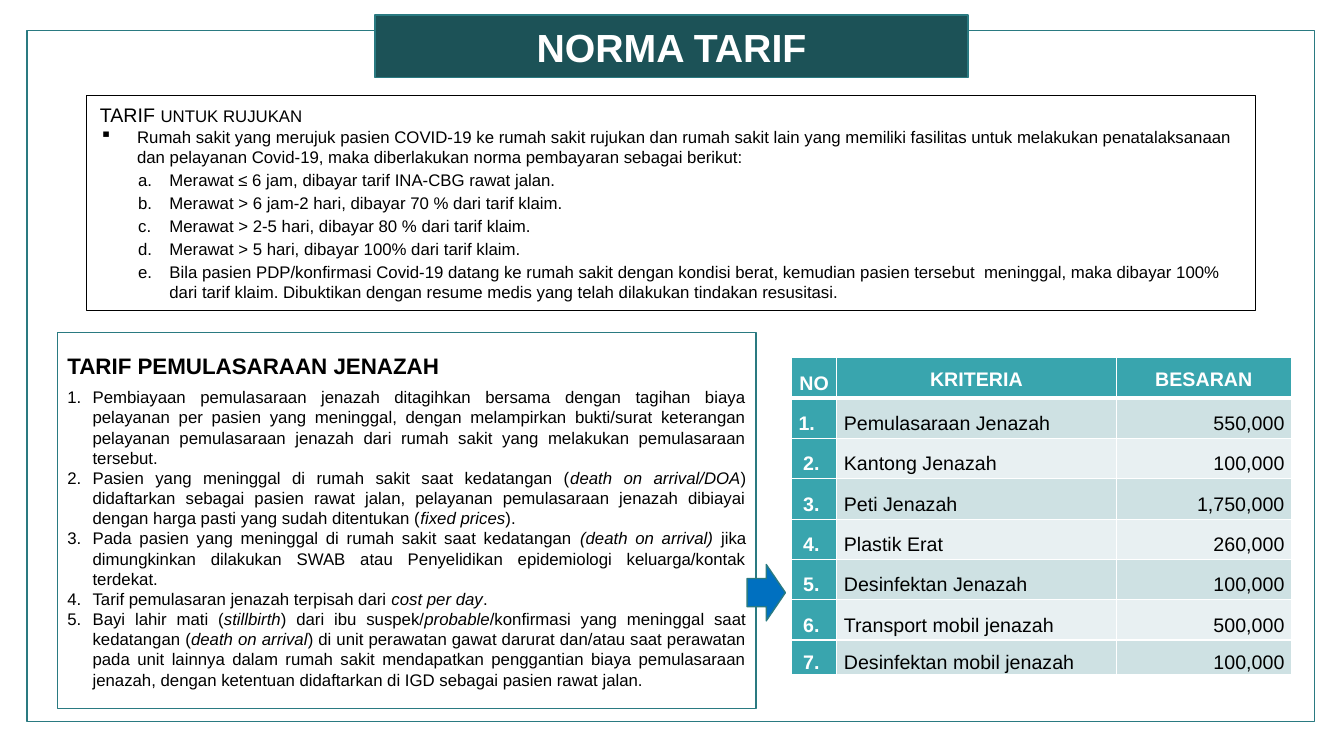
from lxml.etree import SubElement
from pptx import Presentation
from pptx.dml.color import RGBColor
from pptx.enum.shapes import MSO_SHAPE
from pptx.enum.text import MSO_ANCHOR, MSO_AUTO_SIZE, PP_ALIGN
from pptx.oxml.ns import qn
from pptx.util import Inches, Pt

WHITE = RGBColor(0xFF, 0xFF, 0xFF)
BLACK = RGBColor(0, 0, 0)
DARK = RGBColor(0x1C, 0x52, 0x57)
EDGE = RGBColor(0x2A, 0x7A, 0x81)
TEAL = RGBColor(0x39, 0xA5, 0xAE)
BLUE = RGBColor(0x00, 0x70, 0xC0)
BANDS = (RGBColor(0xCE, 0xE1, 0xE3), RGBColor(0xE8, 0xF0, 0xF2))

INTRO = ("Rumah sakit yang merujuk pasien COVID-19 ke rumah sakit rujukan dan rumah sakit lain "
         "yang memiliki fasilitas untuk melakukan penatalaksanaan dan pelayanan Covid-19, "
         "maka diberlakukan norma pembayaran sebagai berikut:")
NORMS = (
    "Merawat ≤ 6 jam, dibayar tarif INA-CBG rawat jalan.",
    "Merawat > 6 jam-2 hari, dibayar 70 % dari tarif klaim.",
    "Merawat > 2-5 hari, dibayar 80 % dari tarif klaim.",
    "Merawat > 5 hari, dibayar 100% dari tarif klaim.",
    "Bila pasien PDP/konfirmasi Covid-19 datang ke rumah sakit dengan kondisi berat, "
    "kemudian pasien tersebut  meninggal, maka dibayar 100% dari tarif klaim. "
    "Dibuktikan dengan resume medis yang telah dilakukan tindakan resusitasi.",
)
# Asterisks enclose italic words
RULES = (
    "Pembiayaan pemulasaraan jenazah ditagihkan bersama dengan tagihan biaya pelayanan per "
    "pasien yang meninggal, dengan melampirkan bukti/surat keterangan pelayanan pemulasaraan "
    "jenazah dari rumah sakit yang melakukan pemulasaraan tersebut.",
    "Pasien yang meninggal di rumah sakit saat kedatangan (*death on arrival/DOA*) didaftarkan "
    "sebagai pasien rawat jalan, pelayanan pemulasaraan jenazah dibiayai dengan harga pasti "
    "yang sudah ditentukan (*fixed prices*).",
    "Pada pasien yang meninggal di rumah sakit saat kedatangan *(death on arrival) *jika "
    "dimungkinkan dilakukan SWAB atau Penyelidikan epidemiologi keluarga/kontak terdekat.",
    "Tarif pemulasaran jenazah terpisah dari *cost per day*.",
    "Bayi lahir mati (*stillbirth*) dari ibu suspek/*probable*/konfirmasi yang meninggal saat "
    "kedatangan (*death on arrival*) di unit perawatan gawat darurat dan/atau saat perawatan "
    "pada unit lainnya dalam rumah sakit mendapatkan penggantian biaya pemulasaraan jenazah, "
    "dengan ketentuan didaftarkan di IGD sebagai pasien rawat jalan.",
)
HEADS = ("NO", "KRITERIA", "BESARAN")
COSTS = (
    ("Pemulasaraan Jenazah", "550,000"),
    ("Kantong Jenazah", "100,000"),
    ("Peti Jenazah", "1,750,000"),
    ("Plastik Erat", "260,000"),
    ("Desinfektan Jenazah", "100,000"),
    ("Transport mobil jenazah", "500,000"),
    ("Desinfektan mobil jenazah", "100,000"),
)


def paint(shape, fill, line, width=1):
    if fill is None:
        shape.fill.background()
    else:
        shape.fill.solid()
        shape.fill.fore_color.rgb = fill
    shape.line.color.rgb = line
    shape.line.width = Pt(width)


def add_box(slide, kind, area, fill, line, width=1):
    shape = slide.shapes.add_shape(kind, *map(Inches, area))
    shape.shadow.inherit = False
    paint(shape, fill, line, width)
    return shape


def style(run, size, color=BLACK, bold=False):
    font = run.font
    font.name, font.size, font.bold = "Arial", Pt(size), bold
    font.color.rgb = color


def add_text(para, text, size, bold=False):
    for i, part in enumerate(text.split("*")):
        run = para.add_run()
        run.text = part
        style(run, size, bold=bold)
        run.font.italic = i % 2 == 1


def set_list(para, left, hang, tag, **attrs):
    props = para._p.get_or_add_pPr()
    props.set("marL", str(Inches(left)))
    props.set("indent", str(-Inches(hang)))
    SubElement(props, qn("a:" + tag), **attrs)


def add_title(slide, text):
    title = slide.shapes.title
    title.left, title.top, title.width, title.height = map(Inches, (3.72, 0.15, 5.88, 0.62))
    paint(title, DARK, EDGE)
    frame = title.text_frame
    frame.text = text
    frame.auto_size = MSO_AUTO_SIZE.NONE
    frame.vertical_anchor = MSO_ANCHOR.MIDDLE
    frame.paragraphs[0].alignment = PP_ALIGN.CENTER
    style(frame.paragraphs[0].runs[0], 28, WHITE, True)
    return title


def add_norms(slide):
    box = add_box(slide, MSO_SHAPE.RECTANGLE, (0.86, 0.95, 11.59, 2.13), None, BLACK, 0.75)
    frame = box.text_frame
    frame.word_wrap = True
    frame.vertical_anchor = MSO_ANCHOR.TOP
    frame.margin_left = frame.margin_right = Inches(0.13)
    frame.margin_top = frame.margin_bottom = Inches(0.07)
    head = frame.paragraphs[0]
    add_text(head, "TARIF ", 14)
    add_text(head, "UNTUK RUJUKAN", 12)
    intro = frame.add_paragraph()
    add_text(intro, INTRO, 12)
    set_list(intro, 0.37, 0.37, "buChar", char="▪")
    for norm in NORMS:
        para = frame.add_paragraph()
        para.space_before = Pt(2)
        add_text(para, norm, 12)
        set_list(para, 0.69, 0.31, "buAutoNum", type="alphaLcPeriod")
    for para in frame.paragraphs:
        para.alignment = PP_ALIGN.LEFT


def add_rules(slide):
    box = add_box(slide, MSO_SHAPE.RECTANGLE, (0.57, 3.3, 6.93, 3.73), WHITE, EDGE)
    frame = box.text_frame
    frame.word_wrap = True
    frame.vertical_anchor = MSO_ANCHOR.MIDDLE
    add_text(frame.paragraphs[0], "TARIF PEMULASARAAN JENAZAH", 16, True)
    for i, rule in enumerate(RULES):
        para = frame.add_paragraph()
        para.space_before = Pt(0 if i else 6)
        add_text(para, rule, 12)
        set_list(para, 0.25, 0.25, "buAutoNum", type="arabicPeriod")
    for para in frame.paragraphs:
        para.alignment = PP_ALIGN.JUSTIFY


def set_edges(cell, base):
    props = cell._tc.get_or_add_tcPr()
    widths = {"lnL": 1, "lnR": 1, "lnT": 1, "lnB": base}
    for i, (tag, width) in enumerate(widths.items()):
        line = SubElement(props, qn("a:" + tag), w=str(Pt(width)))
        fill = SubElement(line, qn("a:solidFill"))
        SubElement(fill, qn("a:srgbClr"), val=str(WHITE))
        props.insert(i, line)


def fill_cell(cell, text, fill, align, color, bold, base=1):
    cell.fill.solid()
    cell.fill.fore_color.rgb = fill
    cell.margin_left = cell.margin_right = Inches(0.07)
    cell.margin_top = cell.margin_bottom = 0
    cell.vertical_anchor = MSO_ANCHOR.MIDDLE
    para = cell.text_frame.paragraphs[0]
    para.text = text
    para.alignment = align
    para.line_spacing = 1.5
    style(para.runs[0], 14, color, bold)
    set_edges(cell, base)


def add_costs(slide):
    area = map(Inches, (7.85, 3.55, 4.96, 3.14))
    table = slide.shapes.add_table(len(COSTS) + 1, len(HEADS), *area).table
    for col, width in zip(table.columns, (0.45, 2.77, 1.74)):
        col.width = Inches(width)
    for row in table.rows:
        row.height = Inches(0.4)
    table.rows[len(COSTS)].height = Inches(0.34)
    for i, head in enumerate(HEADS):
        cell = table.cell(0, i)
        fill_cell(cell, head, TEAL, PP_ALIGN.CENTER, WHITE, True, 3)
        if i:
            cell.vertical_anchor = MSO_ANCHOR.TOP
    for i, (name, cost) in enumerate(COSTS, 1):
        band = BANDS[(i - 1) % 2]
        # The first number stands at the left
        label, align = ("1.", PP_ALIGN.LEFT) if i == 1 else (f"{i}. ", PP_ALIGN.CENTER)
        fill_cell(table.cell(i, 0), label, TEAL, align, WHITE, True)
        fill_cell(table.cell(i, 1), name, band, PP_ALIGN.LEFT, BLACK, False)
        fill_cell(table.cell(i, 2), cost, band, PP_ALIGN.RIGHT, BLACK, False)


def main():
    deck = Presentation()
    deck.slide_width, deck.slide_height = Inches(13.33), Inches(7.5)
    slide = deck.slides.add_slide(deck.slide_layouts[5])
    # Frame behind the title
    border = add_box(slide, MSO_SHAPE.RECTANGLE, (0.27, 0.3, 12.77, 6.86), WHITE, EDGE)
    title = add_title(slide, "NORMA TARIF")
    title._element.addprevious(border._element)
    # Tariff texts, costs and the arrow between them
    add_norms(slide)
    add_rules(slide)
    add_costs(slide)
    add_box(slide, MSO_SHAPE.RIGHT_ARROW, (7.41, 5.6, 0.38, 0.56), BLUE, EDGE)
    deck.save("out.pptx")


if __name__ == "__main__":
    main()
